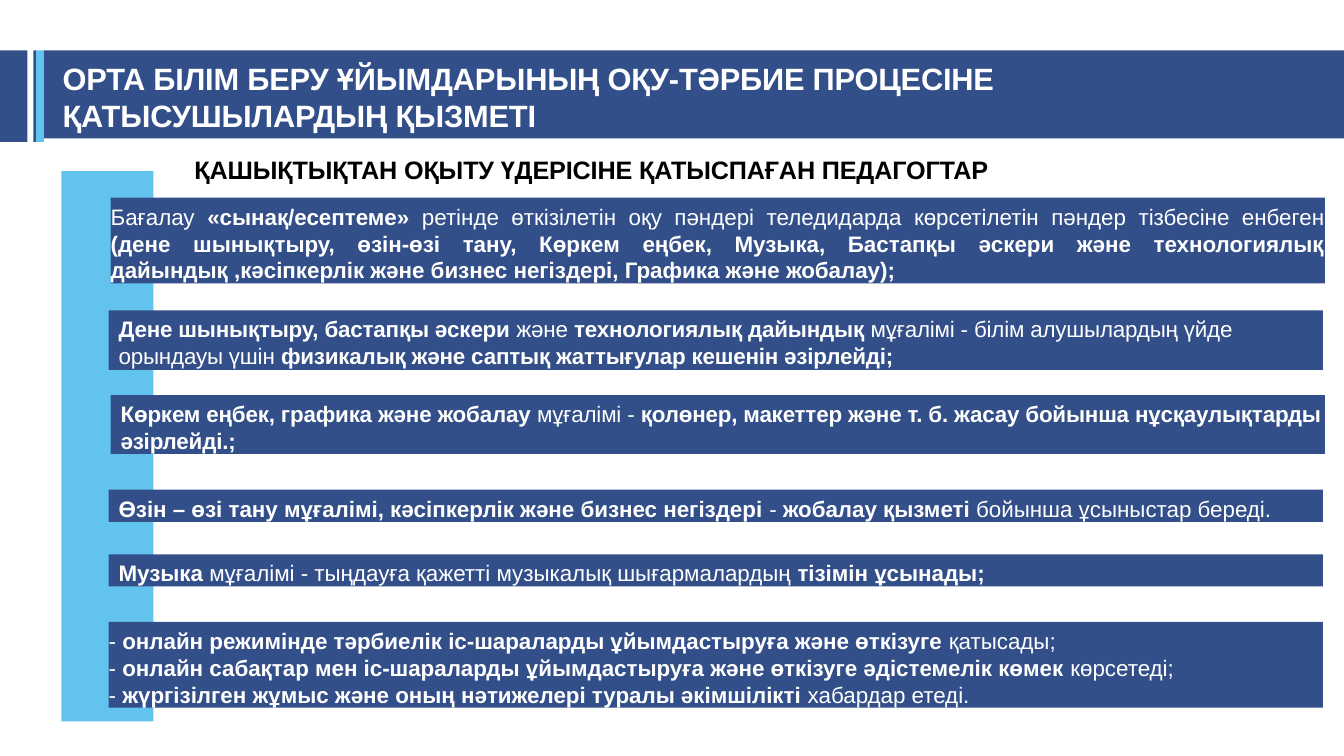
from pptx import Presentation
from pptx.dml.color import RGBColor
from pptx.enum.shapes import MSO_SHAPE
from pptx.enum.text import MSO_ANCHOR, PP_ALIGN
from pptx.util import Cm, Pt

NAVY = RGBColor(0x33, 0x4F, 0x89)
SKY = RGBColor(0x61, 0xC3, 0xEE)
WHITE = RGBColor(0xFF, 0xFF, 0xFF)
BLACK = RGBColor(0x00, 0x00, 0x00)
RECTANGLE = MSO_SHAPE.RECTANGLE
TOP = MSO_ANCHOR.TOP
LEFT, JUSTIFY = PP_ALIGN.LEFT, PP_ALIGN.JUSTIFY

deck = Presentation()
deck.slide_width, deck.slide_height = Cm(33.87), Cm(19.05)
page = deck.slides.add_slide(deck.slide_layouts[6])


def add_block(left, top, width, height, colour):
    block = page.shapes.add_shape(RECTANGLE, Cm(left), Cm(top), Cm(width), Cm(height))
    block.shadow.inherit = False
    block.fill.solid()
    block.fill.fore_color.rgb = colour
    block.line.fill.background()
    return block


def write(box, lines, size, colour, inset=(0, 0.03), align=LEFT, tracking=0):
    """Fill a box; text between asterisks is bold, tracking is in 1/100 pt."""
    frame = box.text_frame
    frame.word_wrap = True
    frame.vertical_anchor = TOP
    frame.margin_left, frame.margin_top = Cm(inset[0]), Cm(inset[1])
    frame.margin_right = frame.margin_bottom = 0
    for number, line in enumerate(lines):
        para = frame.add_paragraph() if number else frame.paragraphs[0]
        para.alignment = align
        para.font.name, para.font.size = "Arial", Pt(size)
        para.font.color.rgb = colour
        for part, words in enumerate(line.split("*")):
            if words:
                span = para.add_run()
                span.text = words
                span.font.bold = part % 2 == 1
                if tracking:
                    span.font._element.set("spc", str(tracking))


# Header band with its stripes, and the side column
for left, top, width, height, colour in [
    (1.11, 1.27, 32.76, 2.22, NAVY),
    (0.84, 1.27, 0.08, 2.31, NAVY),
    (0, 1.27, 0.69, 2.31, NAVY),
    (0.91, 1.27, 0.2, 2.31, SKY),
    (1.55, 4.31, 2.32, 13.87, SKY),
]:
    add_block(left, top, width, height, colour)

# Title and subtitle
title = page.shapes.add_textbox(Cm(1.58), Cm(1.47), Cm(31.67), Cm(1.9))
write(title, ["*ОРТА БІЛІМ БЕРУ ҰЙЫМДАРЫНЫҢ ОҚУ-ТӘРБИЕ ПРОЦЕСІНЕ ҚАТЫСУШЫЛАРДЫҢ ҚЫЗМЕТІ*"],
      22, WHITE, tracking=-10)
subtitle = page.shapes.add_textbox(Cm(4.9), Cm(3.86), Cm(26.67), Cm(0.81))
write(subtitle, ["*ҚАШЫҚТЫҚТАН ОҚЫТУ ҮДЕРІСІНЕ ҚАТЫСПАҒАН ПЕДАГОГТАР*"],
      18, BLACK, tracking=-10)

# Bars: left, top, height, indent, alignment, tracking, lines
bars = [
    (2.79, 4.98, 2.16, 0, JUSTIFY, 0, [
        "Бағалау *«сынақ/есептеме» *ретінде өткізілетін оқу пәндері теледидарда "
        "көрсетілетін пәндер тізбесіне енбеген *(дене шынықтыру, өзін-өзі тану, "
        "Көркем еңбек, Музыка, Бастапқы әскери және технологиялық дайындық "
        ",кәсіпкерлік және бизнес негіздері, Графика және жобалау);*"]),
    (2.74, 7.82, 1.5, 0.25, LEFT, -10, [
        "*Дене шынықтыру, бастапқы әскери *және *технологиялық дайындық *мұғалімі - "
        "білім алушылардың үйде орындауы үшін *физикалық және саптық жаттығулар "
        "кешенін әзірлейді;*"]),
    (2.79, 9.96, 1.48, 0.25, LEFT, -10, [
        "*Көркем еңбек, графика және жобалау *мұғалімі - *қолөнер, макеттер және "
        "т. б. жасау бойынша нұсқаулықтарды әзірлейді.;*"]),
    (2.74, 12.34, 0.81, 0.25, LEFT, 0, [
        "*Өзін – өзі тану мұғалімі, кәсіпкерлік және бизнес негіздері *- "
        "*жобалау қызметі *бойынша ұсыныстар береді."]),
    (2.74, 13.97, 0.81, 0.25, LEFT, 0, [
        "*Музыка *мұғалімі - тыңдауға қажетті музыкалық шығармалардың "
        "*тізімін ұсынады;*"]),
    (2.74, 15.67, 2.16, 0, JUSTIFY, 0, [
        "- *онлайн режимінде тәрбиелік іс-шараларды ұйымдастыруға және өткізуге *қатысады;",
        "- *онлайн сабақтар мен іс-шараларды ұйымдастыруға және өткізуге "
        "әдістемелік көмек *көрсетеді;",
        "- *жүргізілген жұмыс және оның нәтижелері туралы әкімшілікті *хабардар етеді."]),
]
for left, top, height, indent, align, tracking, lines in bars:
    bar = add_block(left, top, 30.6, height, NAVY)
    write(bar, lines, 16, WHITE, (indent, 0.13), align, tracking)

deck.save("out.pptx")
